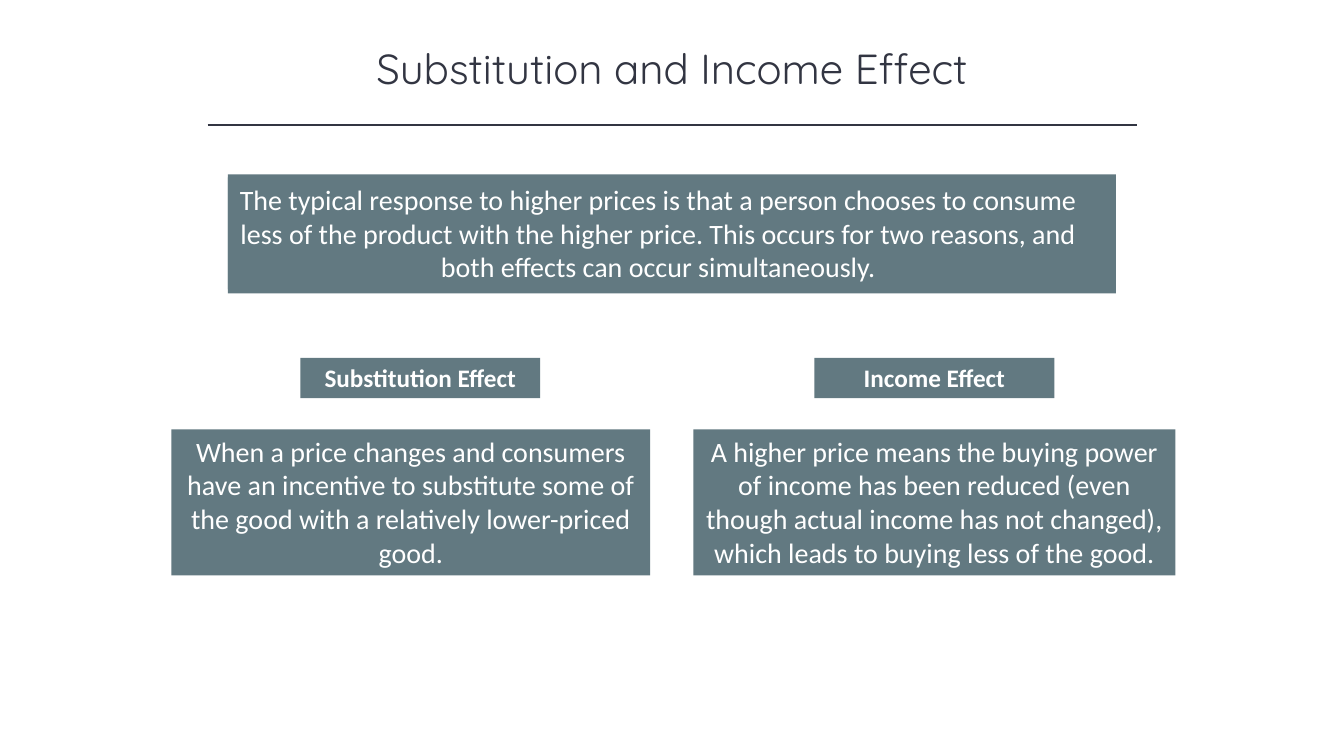
from dataclasses import dataclass

from lxml import etree
from pptx import Presentation
from pptx.dml.color import RGBColor
from pptx.enum.shapes import MSO_CONNECTOR, MSO_SHAPE
from pptx.enum.text import MSO_ANCHOR, PP_ALIGN
from pptx.oxml.ns import qn
from pptx.util import Inches, Pt

RECTANGLE = MSO_SHAPE.RECTANGLE
STRAIGHT = MSO_CONNECTOR.STRAIGHT
CENTER = PP_ALIGN.CENTER
TOP = MSO_ANCHOR.TOP

SLIDE_WIDTH, SLIDE_HEIGHT = Inches(13.33), Inches(7.5)
INK, SLATE, WHITE = "323542", "627981", "FFFFFF"

TITLE_FORMAT = {"name": "Quicksand", "size": Pt(30)}
LABEL_FORMAT = {"name": "Calibri", "size": Pt(18), "bold": True}
BODY_FORMAT = {"name": "Calibri", "size": Pt(20)}

# Rows shared by the two effects, in percent of the slide height
LABEL_TOP, LABEL_HEIGHT, LABEL_WIDTH = 47.33, 5.33, 17.85
BODY_TOP, BODY_HEIGHT = 56.8, 19.33


@dataclass(frozen=True)
class Area:
    """A rectangle in percent of the slide's width and height."""
    left: float
    top: float
    width: float
    height: float

    def lengths(self) -> tuple[int, int, int, int]:
        return (across(self.left), down(self.top),
                across(self.width), down(self.height))


@dataclass(frozen=True)
class Effect:
    name: str
    label_left: float
    body_left: float
    body_width: float
    description: str


EFFECTS = [
    Effect("Substitution Effect", 22.35, 12.75, 35.63,
           "When a price changes and consumers have an incentive to substitute "
           "some of the good with a relatively lower-priced good."),
    Effect("Income Effect", 60.6, 51.6, 35.85,
           "A higher price means the buying power of income has been reduced "
           "(even though actual income has not changed), which leads to buying "
           "less of the good."),
]
INTRODUCTION = ("The typical response to higher prices is that a person chooses to "
                "consume less of the product with the higher price. This occurs for "
                "two reasons, and both effects can occur simultaneously.")


def across(percent: float) -> int:
    return round(SLIDE_WIDTH * percent / 100)


def down(percent: float) -> int:
    return round(SLIDE_HEIGHT * percent / 100)


def color(value: str) -> RGBColor:
    return RGBColor.from_string(value)


def write(shape, text: str, text_color: str, font_format: dict) -> None:
    frame = shape.text_frame
    frame.word_wrap = True
    frame.vertical_anchor = TOP
    paragraph = frame.paragraphs[0]
    paragraph.alignment = CENTER
    run = paragraph.add_run()
    run.text = text
    for attribute, value in font_format.items():
        setattr(run.font, attribute, value)
    run.font.color.rgb = color(text_color)


def add_panel(shapes, area: Area):
    shape = shapes.add_shape(RECTANGLE, *area.lengths())
    shape.shadow.inherit = False
    shape.fill.solid()
    shape.fill.fore_color.rgb = color(SLATE)
    shape.line.fill.background()
    return shape


def add_rule(shapes, left: float, right: float, top: float) -> None:
    rule = shapes.add_connector(STRAIGHT, across(left), down(top),
                                across(right), down(top))
    rule.line.color.rgb = color(INK)
    rule.line.width = Pt(1)
    etree.SubElement(rule._element.spPr, qn("a:effectLst"))


def main() -> None:
    presentation = Presentation()
    presentation.slide_width, presentation.slide_height = SLIDE_WIDTH, SLIDE_HEIGHT
    slide = presentation.slides.add_slide(presentation.slide_layouts[6])
    shapes = slide.shapes

    # Title and rule
    title = shapes.add_textbox(*Area(12.5, 4.93, 75, 8.13).lengths())
    write(title, "Substitution and Income Effect", INK, TITLE_FORMAT)
    add_rule(shapes, 15.45, 84.6, 16.53)

    # Introduction on its backing panel
    introduction = shapes.add_group_shape().shapes
    add_panel(introduction, Area(16.95, 23.07, 66.08, 15.73))
    introduction_text = add_panel(introduction, Area(16.95, 23.47, 64.05, 14.8))
    write(introduction_text, INTRODUCTION, WHITE, BODY_FORMAT)

    # The two effects side by side
    for effect in EFFECTS:
        label = add_panel(shapes, Area(effect.label_left, LABEL_TOP,
                                       LABEL_WIDTH, LABEL_HEIGHT))
        write(label, effect.name, WHITE, LABEL_FORMAT)
        body = add_panel(shapes, Area(effect.body_left, BODY_TOP,
                                      effect.body_width, BODY_HEIGHT))
        write(body, effect.description, WHITE, BODY_FORMAT)

    presentation.save("out.pptx")


if __name__ == "__main__":
    main()
